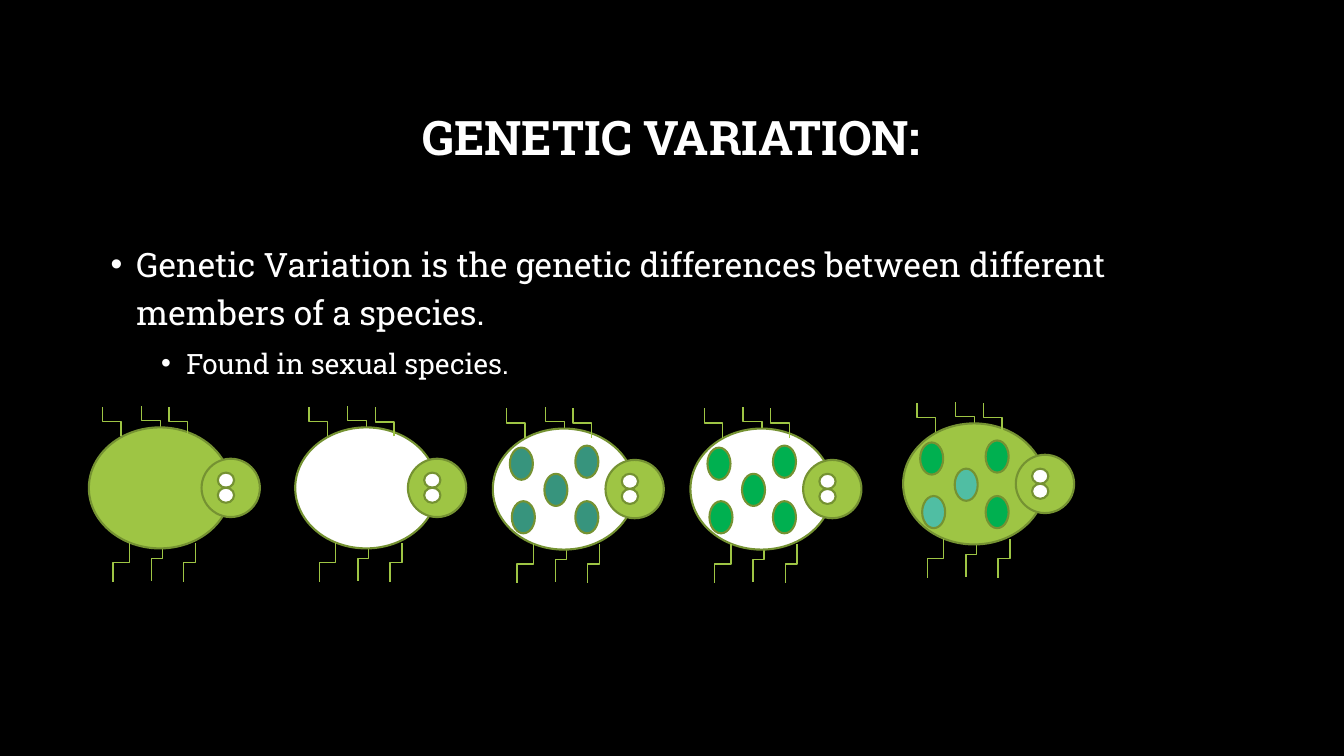
from lxml.etree import SubElement
from pptx import Presentation
from pptx.dml.color import RGBColor
from pptx.enum.shapes import MSO_CONNECTOR as CONNECTOR, MSO_SHAPE as SHAPE
from pptx.enum.text import MSO_ANCHOR as ANCHOR, PP_ALIGN as ALIGN
from pptx.oxml.ns import qn
from pptx.util import Cm, Pt

FONT = "Roboto Slab"
WHITE, LIME, OLIVE = "FFFFFF", "9EC544", "759232"
GREEN, TEAL, AQUA = "00B050", "37947D", "50BEA3"

MIDDLE_LEGS = [(1.80, 0.18, 1.32, -0.53), (1.85, 2.74, 1.58, 3.86)]
OUTER_LEGS = [
    (0.81, 0.23, 0.35, -0.51), (2.49, 0.23, 2.02, -0.51),
    (1.02, 2.92, 0.61, 3.90), (2.69, 2.92, 2.39, 3.90),
]
SPOTS = [(0.43, 0.48), (1.30, 1.14), (2.08, 0.43), (0.48, 1.83), (2.08, 1.83)]
BUGS = [
    (2.24, 10.77, LIME, []),
    (7.44, 10.77, WHITE, []),
    (12.42, 10.80, WHITE, [TEAL] * 5),
    (17.40, 10.80, WHITE, [GREEN] * 5),
    (22.76, 10.67, LIME, [GREEN, AQUA, GREEN, AQUA, GREEN]),
]


def color(value):
    return RGBColor.from_string(value)


def write(paragraph, text, size, bold=False, align=ALIGN.LEFT, spacing=1.0,
          before=0, level=0, indent=None):
    run = paragraph.add_run()
    run.text = text
    run.font.name = FONT
    run.font.size = Pt(size)
    run.font.bold = bold
    run.font.color.rgb = color(WHITE)
    paragraph.alignment = align
    paragraph.line_spacing = spacing
    paragraph.space_before = Pt(before)
    paragraph.level = level
    if indent is not None:
        properties = paragraph._p.get_or_add_pPr()
        properties.set("marL", str(Cm(indent)))
        properties.set("indent", str(-Cm(0.64)))
        SubElement(properties, qn("a:buFont")).set("typeface", "Arial")
        SubElement(properties, qn("a:buChar")).set("char", "•")


def add_text_frame(slide, left, top, width, height, anchor):
    box = slide.shapes.add_textbox(Cm(left), Cm(top), Cm(width), Cm(height))
    box.text_frame.word_wrap = True
    box.text_frame.vertical_anchor = anchor
    return box.text_frame


def add_title(slide, left, top, width, height):
    frame = add_text_frame(slide, left, top, width, height, ANCHOR.MIDDLE)
    write(frame.paragraphs[0], "GENETIC VARIATION:", 34, bold=True,
          align=ALIGN.CENTER, spacing=0.9)


def add_body(slide, left, top, width, height):
    frame = add_text_frame(slide, left, top, width, height, ANCHOR.TOP)
    write(frame.paragraphs[0],
          "Genetic Variation is the genetic differences between different "
          "members of a species.", 24, spacing=1.2, before=10, indent=0.64)
    write(frame.add_paragraph(), "Found in sexual species.", 20,
          spacing=1.2, before=5, level=1, indent=1.91)


def add_oval(group, left, top, width, height, fill):
    shape = group.shapes.add_shape(SHAPE.OVAL, Cm(left), Cm(top), Cm(width), Cm(height))
    shape.shadow.inherit = False
    shape.fill.solid()
    shape.fill.fore_color.rgb = color(fill)
    shape.line.color.rgb = color(OLIVE)
    shape.line.width = Pt(1.5)


def add_leg(group, hip_x, hip_y, foot_x, foot_y):
    upward = foot_y < hip_y
    length, spread = abs(foot_y - hip_y), abs(foot_x - hip_x)
    left = (hip_x + foot_x - length) / 2
    top = (hip_y + foot_y - spread) / 2
    start, end = (top + spread, top) if upward else (top, top + spread)
    leg = group.shapes.add_connector(
        CONNECTOR.ELBOW, Cm(left), Cm(start), Cm(left + length), Cm(end))
    leg.line.color.rgb = color(LIME)
    leg.line.width = Pt(1)
    properties = leg._element.spPr
    properties.find(qn("a:xfrm")).set("rot", str((270 if upward else 90) * 60000))
    SubElement(properties, qn("a:effectLst"))


def add_bug(slide, left, top, body, spots):
    group = slide.shapes.add_group_shape()

    def add_legs(legs):
        for hip_x, hip_y, foot_x, foot_y in legs:
            add_leg(group, left + hip_x, top + hip_y, left + foot_x, top + foot_y)

    add_legs(MIDDLE_LEGS)
    add_oval(group, left, top, 3.58, 3.05, body)
    add_oval(group, left + 2.84, top + 0.79, 1.47, 1.47, LIME)
    add_legs(OUTER_LEGS)
    for eye_y in (1.14, 1.52):
        add_oval(group, left + 3.25, top + eye_y, 0.41, 0.38, WHITE)
    for (x, y), fill in zip(SPOTS, spots):
        add_oval(group, left + x, top + y, 0.58, 0.81, fill)


def main():
    presentation = Presentation()
    presentation.slide_width = Cm(33.87)
    presentation.slide_height = Cm(19.05)
    slide = presentation.slides.add_slide(presentation.slide_layouts[6])
    slide.background.fill.solid()
    slide.background.fill.fore_color.rgb = color("000000")
    add_title(slide, 2.54, 1.70, 28.75, 3.68)
    add_body(slide, 2.54, 5.82, 28.75, 10.26)
    for left, top, body, spots in BUGS:
        add_bug(slide, left, top, body, spots)
    presentation.save("out.pptx")


if __name__ == "__main__":
    main()
